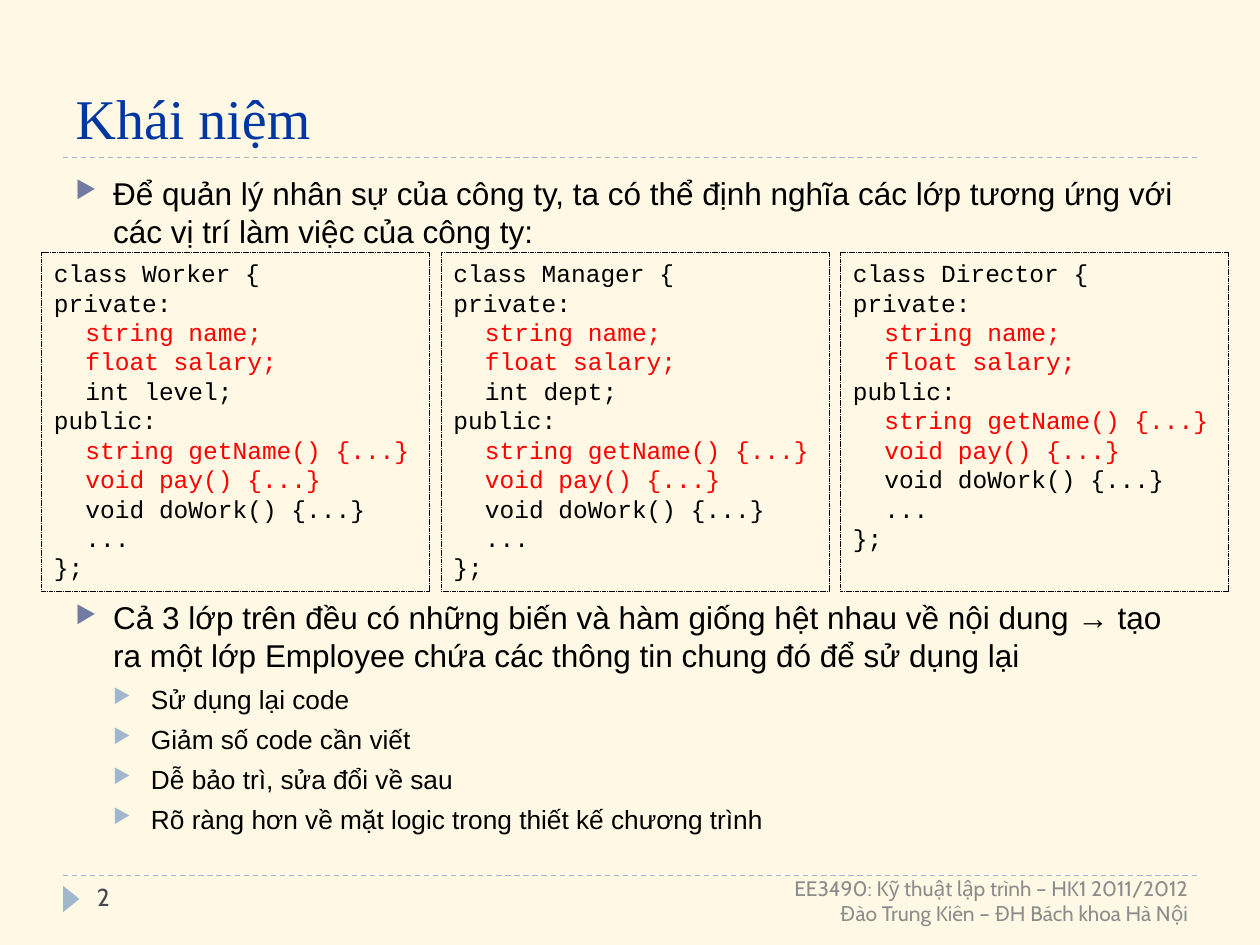
from dataclasses import dataclass
from typing import Optional

from lxml import etree
from pptx import Presentation
from pptx.dml.color import RGBColor
from pptx.enum.dml import MSO_LINE
from pptx.enum.shapes import MSO_CONNECTOR, MSO_SHAPE
from pptx.enum.text import MSO_ANCHOR, MSO_AUTO_SIZE, PP_ALIGN
from pptx.oxml.ns import qn
from pptx.util import Inches, Pt

DASH, DOT = MSO_LINE.DASH, MSO_LINE.SQUARE_DOT
TOP, MID, LOW = MSO_ANCHOR.TOP, MSO_ANCHOR.MIDDLE, MSO_ANCHOR.BOTTOM
LEFT, RIGHT = PP_ALIGN.LEFT, PP_ALIGN.RIGHT
WIDE, HIGH = 10, 7.5


@dataclass(frozen=True)
class Font:
    name: str
    size: float
    color: str


@dataclass(frozen=True)
class Theme:
    back: str = "FEF8E4"
    rule: str = "9FB8CD"
    edge: str = "000000"
    title: Font = Font("Times New Roman", 32, "0036A2")
    main: Font = Font("Arial", 18, "000000")
    sub: Font = Font("Arial", 15, "000000")
    code: Font = Font("Courier New", 14, "000000")
    shared: Font = Font("Courier New", 14, "FF0000")
    page: Font = Font("Cabin", 14, "464653")
    foot: Font = Font("Cabin", 12, "8C8C8C")


@dataclass(frozen=True)
class Area:
    """A box given as shares of the slide."""
    x: float
    y: float
    w: float
    h: float

    def place(self) -> tuple:
        return (Inches(self.x * WIDE), Inches(self.y * HIGH),
                Inches(self.w * WIDE), Inches(self.h * HIGH))


@dataclass(frozen=True)
class Bullet:
    color: str
    depth: int


@dataclass(frozen=True)
class Line:
    text: str
    font: Font
    bullet: Optional[Bullet] = None
    before: float = 0
    indent: float = 0
    align: PP_ALIGN = LEFT


THEME = Theme()
MAIN = Bullet("727CA3", 1)
SUB = Bullet(THEME.rule, 2)
STEP = 0.3


def rgb(color: str) -> RGBColor:
    return RGBColor.from_string(color)


def add_bullet(para, mark: Bullet) -> None:
    props = para._p.get_or_add_pPr()
    props.set("marL", str(Inches(STEP * mark.depth)))
    props.set("indent", str(-Inches(STEP)))
    tint = etree.SubElement(props, qn("a:buClr"))
    etree.SubElement(tint, qn("a:srgbClr"), val=mark.color)
    etree.SubElement(props, qn("a:buSzPct"), val="76000")
    etree.SubElement(props, qn("a:buChar"), char="▶")


def write(shape, lines: list[Line], anchor: MSO_ANCHOR = TOP) -> None:
    frame = shape.text_frame
    frame.word_wrap = True
    frame.auto_size = MSO_AUTO_SIZE.NONE
    frame.vertical_anchor = anchor
    frame.text = "\n".join(line.text for line in lines)
    for para, line in zip(frame.paragraphs, lines):
        para.alignment = line.align
        para.space_before = Pt(line.before)
        if line.indent:
            para._p.get_or_add_pPr().set("indent", str(Inches(line.indent)))
        if line.bullet:
            add_bullet(para, line.bullet)
        for run in para.runs:
            run.font.name = line.font.name
            run.font.size = Pt(line.font.size)
            run.font.color.rgb = rgb(line.font.color)


def add_text(slide, area: Area, lines: list[Line],
             anchor: MSO_ANCHOR = TOP) -> None:
    write(slide.shapes.add_textbox(*area.place()), lines, anchor)


def add_rule(slide, y: float) -> None:
    left, top, width, _ = Area(0.05, y, 0.9, 0).place()
    rule = slide.shapes.add_connector(
        MSO_CONNECTOR.STRAIGHT, left, top, left + width, top)
    rule.line.color.rgb = rgb(THEME.rule)
    rule.line.width = Pt(0.75)
    rule.line.dash_style = DASH
    etree.SubElement(rule._element.spPr, qn("a:effectLst"))


def class_code(name: str, field: str) -> list[Line]:
    def outer(text: str) -> Line:
        return Line(text, THEME.code)

    def inner(text: str, font: Font = THEME.code) -> Line:
        return Line(text, font, indent=0.25)

    own = [inner(field)] if field else []
    return [outer(f"class {name} {{"), outer("private:"),
            inner("string name;", THEME.shared),
            inner("float salary;", THEME.shared), *own,
            outer("public:"),
            inner("string getName() {...}", THEME.shared),
            inner("void pay() {...}", THEME.shared),
            inner("void doWork() {...}"), inner("..."), outer("};")]


def add_class(slide, col: int, name: str, field: str) -> None:
    area = Area(0.033 + 0.317 * col, 2 / HIGH, 0.308, 2.69 / HIGH)
    box = slide.shapes.add_shape(MSO_SHAPE.RECTANGLE, *area.place())
    box.shadow.inherit = False
    box.fill.background()
    box.line.color.rgb = rgb(THEME.edge)
    box.line.width = Pt(0.25)
    box.line.dash_style = DOT
    write(box, class_code(name, field))


def main() -> None:
    deck = Presentation()
    deck.slide_width, deck.slide_height = Inches(WIDE), Inches(HIGH)
    slide = deck.slides.add_slide(deck.slide_layouts[5])
    slide.background.fill.solid()
    slide.background.fill.fore_color.rgb = rgb(THEME.back)

    # Rules and page marker
    for y in (6.95 / HIGH, 1.25 / HIGH):
        add_rule(slide, y)
    mark = slide.shapes.add_shape(
        MSO_SHAPE.ISOSCELES_TRIANGLE,
        *Area(0.046, 7.07 / HIGH, 0.021, 0.13 / HIGH).place())
    mark.rotation = 90
    mark.shadow.inherit = False
    mark.fill.solid()
    mark.fill.fore_color.rgb = rgb(THEME.rule)
    mark.line.fill.background()

    # Title
    title = slide.shapes.title
    title.left, title.top, title.width, title.height = Area(
        0.05, 0.17 / HIGH, 0.9, 1.08 / HIGH).place()
    write(title, [Line("Khái niệm", THEME.title)], LOW)

    # Bullets, with room between the two main points for the classes
    points = ["Sử dụng lại code", "Giảm số code cần viết",
              "Dễ bảo trì, sửa đổi về sau",
              "Rõ ràng hơn về mặt logic trong thiết kế chương trình"]
    add_text(slide, Area(0.05, 1.33 / HIGH, 0.9, 0.72), [
        Line("Để quản lý nhân sự của công ty, ta có thể định nghĩa các lớp "
             "tương ứng với các vị trí làm việc của công ty:",
             THEME.main, MAIN),
        Line("Cả 3 lớp trên đều có những biến và hàm giống hệt nhau về nội "
             "dung → tạo ra một lớp Employee chứa các thông tin chung đó để "
             "sử dụng lại", THEME.main, MAIN, before=199.5),
        *(Line(text, THEME.sub, SUB, before=5) for text in points)])

    # Page number and footer
    foot = 6.95 / HIGH
    add_text(slide, Area(0.067, foot, 0.217, 0.4 / HIGH),
             [Line("2", THEME.page)])
    add_text(slide, Area(0.342, foot, 0.611, 0.4 / HIGH), [
        Line(text, THEME.foot, align=RIGHT) for text in (
            "EE3490: Kỹ thuật lập trình – HK1 2011/2012",
            "Đào Trung Kiên – ĐH Bách khoa Hà Nội")], MID)

    # Class listings
    kinds = [("Worker", "int level;"), ("Manager", "int dept;"),
             ("Director", "")]
    for col, (name, field) in enumerate(kinds):
        add_class(slide, col, name, field)

    deck.save("out.pptx")


if __name__ == "__main__":
    main()
